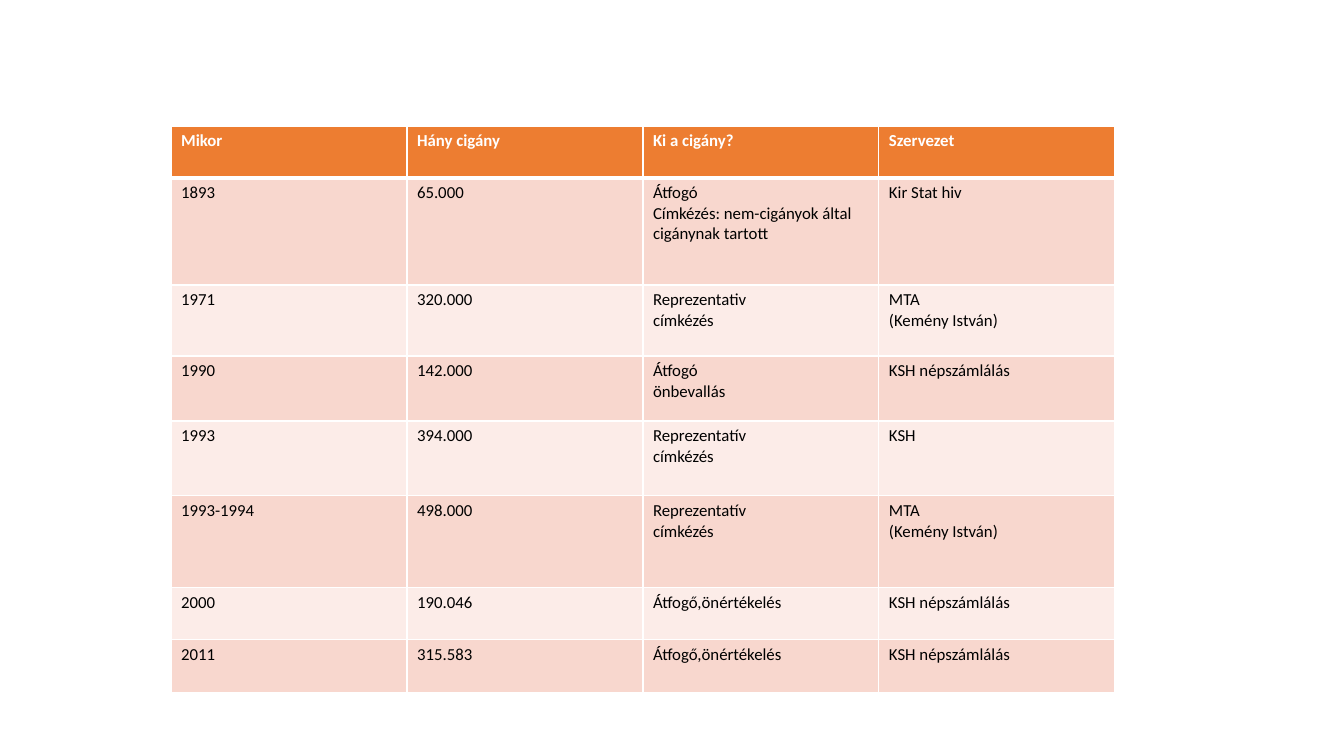
"""Build a slide with a table of Roma population counts by year and organisation."""
import pptx
import pptx.dml.color
import pptx.oxml.ns
import pptx.util
from lxml import etree

HEADER = ("Mikor", "Hány cigány", "Ki a cigány?", "Szervezet")
SURVEYS = [
    ("1893", "65.000", "Átfogó\nCímkézés: nem-cigányok által cigánynak tartott", "Kir Stat hiv"),
    ("1971", "320.000", "Reprezentativ\ncímkézés", "MTA\n(Kemény István)"),
    ("1990", "142.000", "Átfogó\nönbevallás", "KSH népszámlálás"),
    ("1993", "394.000", "Reprezentatív\ncímkézés", "KSH"),
    ("1993-1994", "498.000", "Reprezentatív\ncímkézés", "MTA\n(Kemény István)"),
    ("2000", "190.046", "Átfogő,önértékelés", "KSH népszámlálás"),
    ("2011", "315.583", "Átfogő,önértékelés", "KSH népszámlálás"),
]
ROW_HEIGHTS = (52, 107, 71, 65, 75, 92, 52, 53)
COLUMN_WIDTH = 236
TABLE_LEFT, TABLE_TOP = 171, 126
SLIDE_WIDTH, SLIDE_HEIGHT = 1344, 756
COLORS = {
    "header": "ED7D31",
    "odd": "F8D7CE",
    "even": "FCECE8",
    "border": "FFFFFF",
    "header_text": "FFFFFF",
    "text": "000000",
}
THIN, THICK = 1, 3


def px(length):
    return pptx.util.Emu(round(length * 914400 / 100.8))


def color(name):
    return pptx.dml.color.RGBColor.from_string(COLORS[name])


def add_borders(cell, top, bottom):
    properties = cell._tc.get_or_add_tcPr()
    qn = pptx.oxml.ns.qn
    for side, points in (("L", THIN), ("R", THIN), ("T", top), ("B", bottom)):
        line = etree.SubElement(properties, qn(f"a:ln{side}"), w=str(pptx.util.Pt(points)))
        fill = etree.SubElement(line, qn("a:solidFill"))
        etree.SubElement(fill, qn("a:srgbClr"), val=COLORS["border"])


def format_cell(cell, text, row_index):
    is_header = row_index == 0
    add_borders(cell, THICK if row_index == 1 else THIN, THICK if is_header else THIN)
    cell.fill.solid()
    cell.fill.fore_color.rgb = color("header" if is_header else "odd" if row_index % 2 else "even")
    cell.text = text
    for paragraph in cell.text_frame.paragraphs:
        paragraph.font.name = "Calibri"
        paragraph.font.size = pptx.util.Pt(12)
        paragraph.font.bold = is_header
        paragraph.font.color.rgb = color("header_text" if is_header else "text")


def main():
    presentation = pptx.Presentation()
    presentation.slide_width, presentation.slide_height = px(SLIDE_WIDTH), px(SLIDE_HEIGHT)
    slide = presentation.slides.add_slide(presentation.slide_layouts[6])
    rows = [HEADER, *SURVEYS]
    table = slide.shapes.add_table(
        len(rows), len(HEADER), px(TABLE_LEFT), px(TABLE_TOP),
        px(COLUMN_WIDTH * len(HEADER)), px(sum(ROW_HEIGHTS)),
    ).table
    for column in table.columns:
        column.width = px(COLUMN_WIDTH)
    for row_index, (texts, height) in enumerate(zip(rows, ROW_HEIGHTS)):
        table.rows[row_index].height = px(height)
        for column_index, text in enumerate(texts):
            format_cell(table.cell(row_index, column_index), text, row_index)
    presentation.save("out.pptx")


if __name__ == "__main__":
    main()
